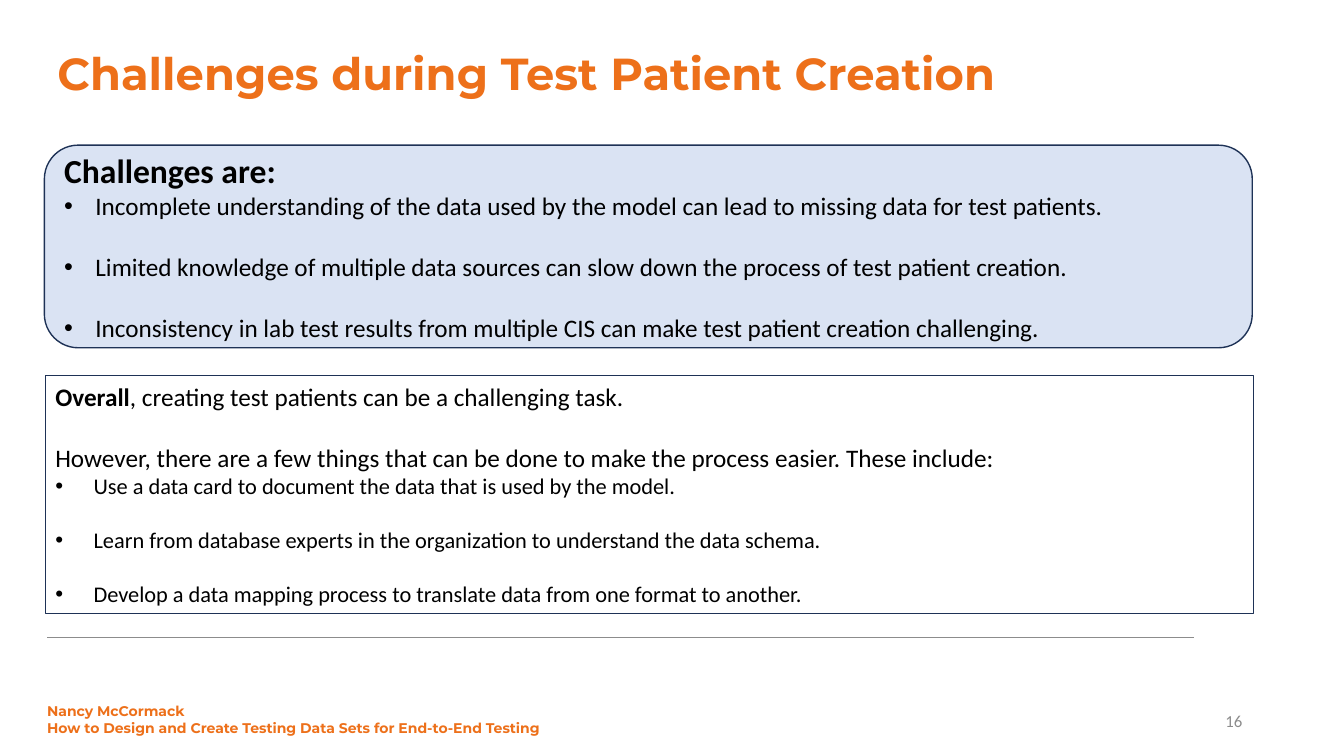
import pptx
import pptx.dml.color
import pptx.enum.shapes
import pptx.enum.text
import pptx.oxml
import pptx.oxml.ns
import pptx.util
from dataclasses import dataclass

Inches = pptx.util.Inches
Pt = pptx.util.Pt
MIDDLE = pptx.enum.text.MSO_ANCHOR.MIDDLE
TOP = pptx.enum.text.MSO_ANCHOR.TOP
SHAPES = pptx.enum.shapes.MSO_SHAPE


@dataclass(frozen=True)
class Theme:
    orange: str = "ED701A"
    navy: str = "1E3256"
    pale_blue: str = "DAE3F3"
    grey: str = "8C8C8C"
    black: str = "000000"
    heading_font: str = "Montserrat"
    body_font: str = "Calibri"
    title: int = 32
    lead: int = 24
    body: int = 18
    detail: int = 16
    number: int = 12
    footer: int = 10


theme = Theme()


def rgb(code):
    return pptx.dml.color.RGBColor.from_string(code)


def write(shape, lines, font, color, anchor):
    """Fill a shape from lines of (bold text, plain text, size, space before, bullet indent)."""
    frame = shape.text_frame
    frame.word_wrap = True
    frame.vertical_anchor = anchor
    for index, (bold, plain, size, space, indent) in enumerate(lines):
        paragraph = frame.add_paragraph() if index else frame.paragraphs[0]
        paragraph.alignment = pptx.enum.text.PP_ALIGN.LEFT
        paragraph.space_before = Pt(space)
        for text, is_bold in ((bold, True), (plain, False)):
            if text:
                run = paragraph.add_run()
                run.text = text
                run.font.name = font
                run.font.size = Pt(size)
                run.font.bold = is_bold
                run.font.color.rgb = rgb(color)
        if indent:
            properties = paragraph._p.get_or_add_pPr()
            properties.set("marL", str(Inches(indent)))
            properties.set("indent", str(-Inches(indent)))
            for bullet in ('<a:buFont %s typeface="Arial"/>', '<a:buChar %s char="•"/>'):
                properties.append(pptx.oxml.parse_xml(bullet % pptx.oxml.ns.nsdecls("a")))


presentation = pptx.Presentation()
presentation.slide_width = Inches(13.33)
presentation.slide_height = Inches(7.5)
slide = presentation.slides.add_slide(presentation.slide_layouts[6])
shapes = slide.shapes

title = shapes.add_textbox(Inches(0.47), Inches(0.48), Inches(12.2), Inches(0.55))
write(title, [("Challenges during Test Patient Creation", "", theme.title, 0, 0)],
      theme.heading_font, theme.orange, MIDDLE)
title.text_frame.paragraphs[0].line_spacing = 0.9

divider = shapes.add_connector(pptx.enum.shapes.MSO_CONNECTOR.STRAIGHT,
                               Inches(0.47), Inches(6.32), Inches(11.84), Inches(6.32))
divider.line.color.rgb = rgb(theme.grey)
divider.line.width = Pt(0.5)
divider._element.spPr.append(
    pptx.oxml.parse_xml("<a:effectLst %s/>" % pptx.oxml.ns.nsdecls("a")))

challenges = shapes.add_shape(SHAPES.ROUNDED_RECTANGLE,
                              Inches(0.44), Inches(1.44), Inches(11.98), Inches(2.01))
challenges.fill.solid()
challenges.fill.fore_color.rgb = rgb(theme.pale_blue)
challenges.line.width = Pt(1)

advice = shapes.add_shape(SHAPES.RECTANGLE,
                          Inches(0.45), Inches(3.73), Inches(11.98), Inches(2.36))
advice.fill.background()
advice.line.width = Pt(0.75)

for panel in (challenges, advice):
    panel.shadow.inherit = False
    panel.line.color.rgb = rgb(theme.navy)

# A gap is one line of the text around it
body_gap, detail_gap = 22, 19.5

write(challenges, [
    ("Challenges are:", "", theme.lead, 0, 0),
    ("", "Incomplete understanding of the data used by the model can lead to missing data "
         "for test patients.", theme.body, 0, 0.31),
    ("", "Limited knowledge of multiple data sources can slow down the process of test "
         "patient creation.", theme.body, body_gap, 0.31),
    ("", "Inconsistency in lab test results from multiple CIS can make test patient creation "
         "challenging.", theme.body, body_gap, 0.31),
], theme.body_font, theme.black, MIDDLE)

write(advice, [
    ("Overall", ", creating test patients can be a challenging task.", theme.body, 0, 0),
    ("", "However, there are a few things that can be done to make the process easier. "
         "These include:", theme.body, body_gap, 0),
    ("", "Use a data card to document the data that is used by the model.",
     theme.detail, 0, 0.38),
    ("", "Learn from database experts in the organization to understand the data schema.",
     theme.detail, detail_gap, 0.38),
    ("", "Develop a data mapping process to translate data from one format to another.",
     theme.detail, detail_gap, 0.38),
], theme.body_font, theme.black, TOP)

page_number = shapes.add_textbox(Inches(9.42), Inches(6.95), Inches(3), Inches(0.4))
write(page_number, [("", "16", theme.number, 0, 0)], theme.body_font, theme.grey, MIDDLE)
page_number.text_frame.paragraphs[0].alignment = pptx.enum.text.PP_ALIGN.RIGHT

footer = shapes.add_textbox(Inches(0.37), Inches(6.92), Inches(5.24), Inches(0.44))
write(footer, [
    ("Nancy McCormack", "", theme.footer, 0, 0),
    ("How to Design and Create Testing Data Sets for End-to-End Testing", "",
     theme.footer, 0, 0),
], theme.heading_font, theme.orange, TOP)

presentation.save("out.pptx")
